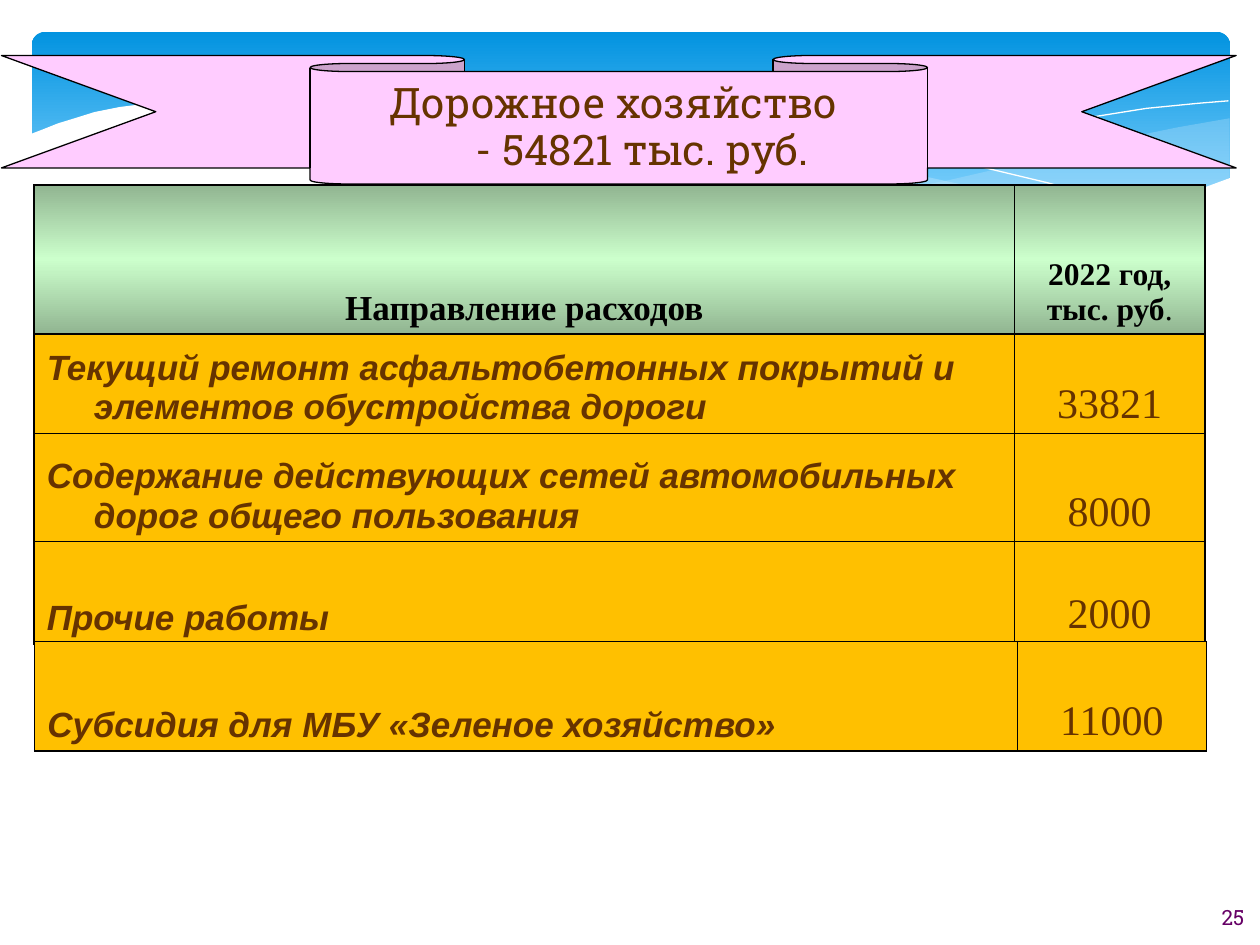
from dataclasses import dataclass

from lxml.etree import SubElement
from pptx import Presentation
from pptx.dml.color import RGBColor
from pptx.enum.shapes import MSO_SHAPE as Preset
from pptx.enum.text import MSO_ANCHOR as Anchor, MSO_AUTO_SIZE as AutoSize, PP_ALIGN as Align
from pptx.oxml.ns import qn
from pptx.util import Cm, Pt

WHITE = RGBColor(0xFF, 0xFF, 0xFF)
BLACK = RGBColor(0x00, 0x00, 0x00)
SKY = RGBColor(0x02, 0x93, 0xE0)
PALE_SKY = RGBColor(0x83, 0xD3, 0xFE)
MIST = RGBColor(0xC6, 0xE7, 0xFC)
MINT = RGBColor(0xCC, 0xFF, 0xCC)
AMBER = RGBColor(0xFF, 0xC0, 0x00)
PINK = RGBColor(0xFF, 0xCC, 0xFF)
BROWN = RGBColor(0x66, 0x33, 0x00)
PURPLE = RGBColor(0x66, 0x00, 0x66)
SERIF, SANS, SLAB = "Times New Roman", "Arial", "Roboto Slab"
HANG = Cm(0.95)
WAVE_UNIT = Cm(2.54) / 100


@dataclass(frozen=True)
class Stop:
    position: int
    color: RGBColor
    shade: int = 100


@dataclass(frozen=True)
class Wave:
    points: tuple[tuple[int, int], ...]
    fill: RGBColor | None = None
    opacity: int = 100


@dataclass(frozen=True)
class Expense:
    name: str
    amount: str
    height: float


HEADER_STOPS = (Stop(0, MINT, 46), Stop(50, MINT), Stop(100, MINT, 46))
BAND_STOPS = (Stop(0, SKY), Stop(90, PALE_SKY))
WAVES = (
    Wave(((975, 94), (935, 101), (891, 110), (861, 118), (805, 131), (753, 143), (706, 152),
          (661, 160), (705, 165), (745, 169), (781, 172), (824, 172), (863, 170), (897, 165),
          (928, 158), (949, 152), (976, 141), (976, 94)), MIST, 29),
    Wave(((893, 167), (837, 160), (775, 149), (706, 134), (629, 116), (569, 102), (514, 92),
          (465, 86), (420, 82), (380, 80), (328, 81), (286, 86), (342, 94), (404, 106),
          (449, 116), (530, 135), (601, 150), (665, 161), (722, 168), (773, 172), (818, 173),
          (857, 171), (893, 167)), MIST, 40),
    Wave(((309, 90), (328, 86), (363, 83), (401, 81), (450, 82), (489, 84), (533, 88),
          (582, 94), (636, 102), (695, 114), (760, 128), (831, 145), (907, 166))),
    Wave(((613, 151), (652, 141), (695, 130), (748, 117), (806, 104), (866, 93), (910, 86),
          (951, 82), (975, 80))),
    Wave(((977, 141), (950, 151), (920, 159), (887, 166), (850, 170), (809, 171), (761, 170),
          (708, 165), (647, 156), (579, 144), (503, 128), (447, 114), (391, 102), (339, 92),
          (292, 85), (250, 81), (211, 78), (177, 78), (146, 79), (119, 82), (95, 85),
          (75, 89), (59, 94), (46, 98), (36, 102), (23, 107), (23, 224), (977, 224),
          (977, 141)), WHITE),
)
EXPENSES = (
    Expense("Текущий ремонт асфальтобетонных покрытий и элементов обустройства дороги",
            "33821", 2.01),
    Expense("Содержание действующих сетей автомобильных дорог общего пользования", "8000", 2.18),
    Expense("Прочие работы", "2000", 2.06),
)
SUBSIDY = Expense("Субсидия для МБУ «Зеленое хозяйство»", "11000", 2.21)


def write(paragraph, text: str, *, font: str, size: float, color: RGBColor,
          bold: bool = False, italic: bool = False, align=Align.CENTER) -> None:
    paragraph.alignment = align
    properties = paragraph._p.get_or_add_pPr()
    properties.set("marL", str(HANG))
    properties.set("indent", str(-HANG))
    run = paragraph.add_run()
    run.text = text
    run.font.name, run.font.size, run.font.color.rgb = font, Pt(size), color
    run.font.bold, run.font.italic = bold, italic


def paint_gradient(fill, element, stops: tuple[Stop, ...]) -> None:
    fill.gradient()
    fill.gradient_angle = 270
    stop_list = element.find(".//" + qn("a:gsLst"))
    for child in list(stop_list):
        stop_list.remove(child)
    for stop in stops:
        item = SubElement(stop_list, qn("a:gs"), pos=str(stop.position * 1000))
        color = SubElement(item, qn("a:srgbClr"), val=str(stop.color))
        if stop.shade < 100:
            SubElement(color, qn("a:shade"), val=str(stop.shade * 1000))


def draw_wave(slide, wave: Wave) -> None:
    builder = slide.shapes.build_freeform(*wave.points[0], scale=WAVE_UNIT)
    builder.add_line_segments(wave.points[1:], close=wave.fill is not None)
    shape = builder.convert_to_shape()
    shape.shadow.inherit = False
    if wave.fill is None:
        shape.fill.background()
        shape.line.color.rgb = WHITE
        shape.line.width = Pt(0)
        return
    shape.line.fill.background()
    shape.fill.solid()
    shape.fill.fore_color.rgb = wave.fill
    if wave.opacity < 100:
        color = shape.element.spPr.find(".//" + qn("a:srgbClr"))
        SubElement(color, qn("a:alpha"), val=str(wave.opacity * 1000))


def draw_background(slide) -> None:
    band = slide.shapes.add_shape(Preset.ROUNDED_RECTANGLE,
                                  Cm(0.64), Cm(0.64), Cm(24.16), Cm(3.96))
    band.adjustments[0] = 0.07
    band.shadow.inherit = False
    band.line.fill.background()
    paint_gradient(band.fill, band.element, BAND_STOPS)
    for wave in WAVES:
        draw_wave(slide, wave)


def add_grid(slide, left: float, top: float, widths: tuple[float, ...],
             heights: tuple[float, ...]):
    frame = slide.shapes.add_table(len(heights), len(widths), Cm(left), Cm(top),
                                   Cm(sum(widths)), Cm(sum(heights)))
    table = frame.table
    table.first_row = table.horz_banding = False
    for column, width in zip(table.columns, widths):
        column.width = Cm(width)
    for row, height in zip(table.rows, heights):
        row.height = Cm(height)
    for cell in table.iter_cells():
        cell.vertical_anchor = Anchor.BOTTOM
        properties = cell._tc.get_or_add_tcPr()
        for side in ("a:lnL", "a:lnR", "a:lnT", "a:lnB"):
            border = SubElement(properties, qn(side), w=str(Pt(1)))
            solid = SubElement(border, qn("a:solidFill"))
            SubElement(solid, qn("a:srgbClr"), val=str(BLACK))
    return table


def fill_expense(table, row: int, expense: Expense) -> None:
    name, amount = table.cell(row, 0), table.cell(row, 1)
    for cell in (name, amount):
        cell.fill.solid()
        cell.fill.fore_color.rgb = AMBER
    write(name.text_frame.paragraphs[0], expense.name, font=SANS, size=20, color=BROWN,
          bold=True, italic=True, align=Align.LEFT)
    write(amount.text_frame.paragraphs[0], expense.amount, font=SERIF, size=24, color=BROWN)


def draw_expenses(slide) -> None:
    table = add_grid(slide, 0.69, 3.73, (19.76, 3.84),
                     (3, *(expense.height for expense in EXPENSES)))
    direction, year = table.cell(0, 0), table.cell(0, 1)
    for cell in (direction, year):
        paint_gradient(cell.fill, cell._tc, HEADER_STOPS)
    write(direction.text_frame.paragraphs[0], "Направление расходов",
          font=SERIF, size=20, color=BLACK, bold=True)
    year_format = {"font": SERIF, "size": 18, "color": BLACK}
    write(year.text_frame.paragraphs[0], "2022 год,", bold=True, **year_format)
    unit = year.text_frame.add_paragraph()
    write(unit, "тыс. руб", bold=True, **year_format)
    write(unit, ".", **year_format)
    for row, expense in enumerate(EXPENSES, start=1):
        fill_expense(table, row, expense)


def draw_title(slide) -> None:
    ribbon = slide.shapes.add_shape(Preset.DOWN_RIBBON, Cm(0.03), Cm(1.12), Cm(24.89), Cm(2.59))
    ribbon.adjustments[0], ribbon.adjustments[1] = 0.125, 0.5
    ribbon.shadow.inherit = False
    ribbon.fill.solid()
    ribbon.fill.fore_color.rgb = PINK
    ribbon.line.color.rgb = BLACK
    ribbon.line.width = Pt(0.75)
    title = slide.shapes.title
    title.left, title.top, title.width, title.height = Cm(6.25), Cm(1.45), Cm(12.45), Cm(2.26)
    slide.shapes.element.append(title.element)
    frame = title.text_frame
    frame.auto_size, frame.word_wrap = AutoSize.NONE, True
    frame.vertical_anchor = Anchor.MIDDLE
    paragraph = frame.paragraphs[0]
    paragraph.line_spacing = 0.93
    write(paragraph, "Дорожное хозяйство ", font=SLAB, size=24, color=BROWN)
    paragraph.add_line_break()
    write(paragraph, "- 54821 тыс. руб.", font=SLAB, size=24, color=BROWN)


def draw_page_number(slide) -> None:
    box = slide.shapes.add_textbox(Cm(23.9), Cm(18.11), Cm(1.91), Cm(0.76))
    box.text_frame.word_wrap = True
    write(box.text_frame.paragraphs[0], "25", font=SLAB, size=12, color=PURPLE)


def main() -> None:
    presentation = Presentation()
    presentation.slide_width, presentation.slide_height = Cm(25.4), Cm(19.05)
    slide = presentation.slides.add_slide(presentation.slide_layouts[5])
    draw_background(slide)
    draw_expenses(slide)
    draw_title(slide)
    draw_page_number(slide)
    fill_expense(add_grid(slide, 0.7, 12.93, (19.81, 3.81), (SUBSIDY.height,)), 0, SUBSIDY)
    presentation.save("out.pptx")


if __name__ == "__main__":
    main()
